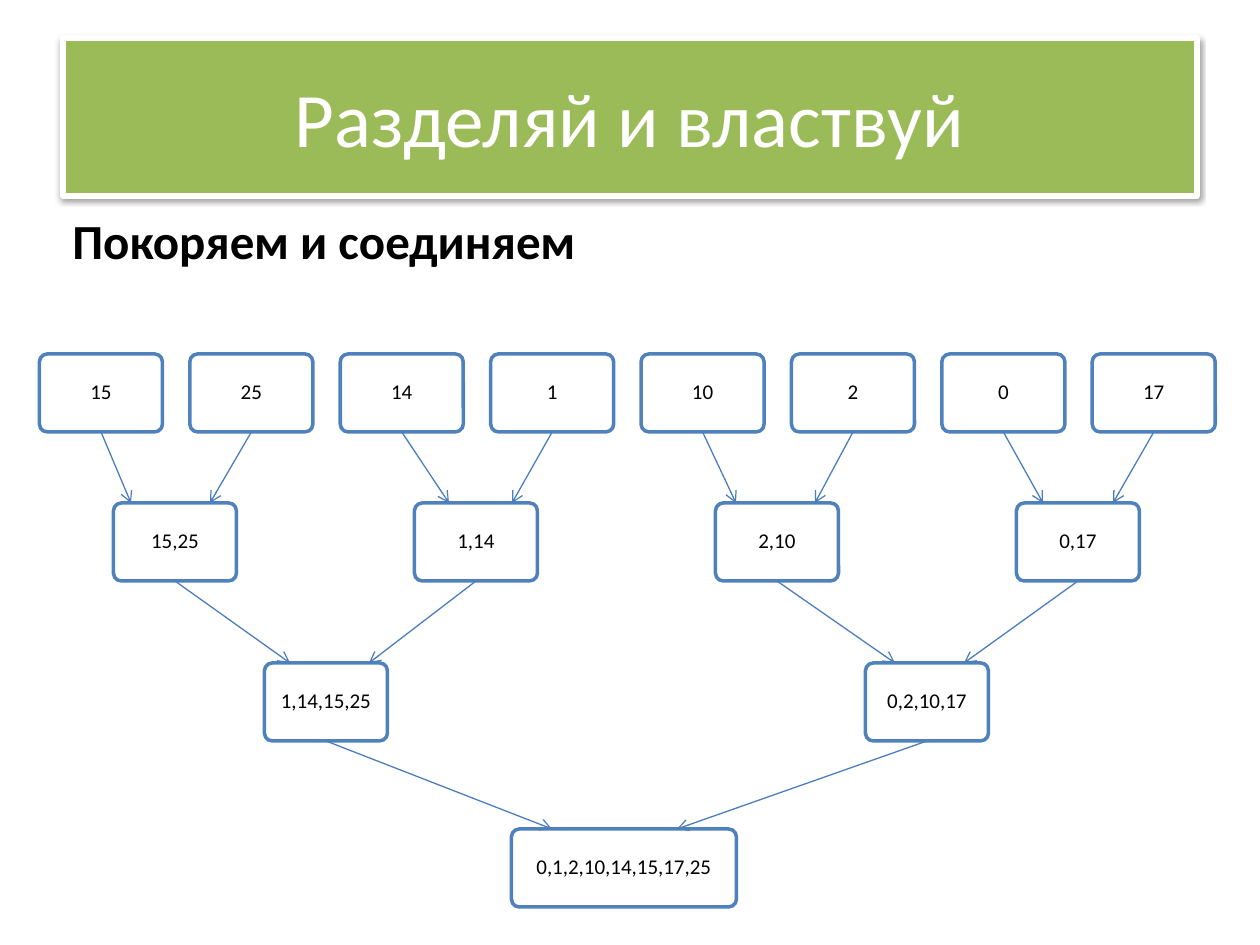
"""Build the slide on the merge steps of divide and conquer."""
from lxml import etree
from pptx import Presentation
from pptx.dml.color import RGBColor
from pptx.enum.shapes import MSO_CONNECTOR as Link, MSO_SHAPE as Form
from pptx.enum.text import MSO_ANCHOR as Anchor, PP_ALIGN as Align
from pptx.oxml import parse_xml
from pptx.oxml.ns import nsdecls, qn
from pptx.util import Pt

PX = 914400 / 126


def rgb(code):
    return RGBColor.from_string(code)


def write(shape, text, size=12, color="000000", bold=False, align=Align.CENTER,
          anchor=Anchor.MIDDLE, gap=None, pad=None):
    frame = shape.text_frame
    frame.word_wrap = True
    frame.vertical_anchor = anchor
    if pad is not None:
        frame.margin_left = frame.margin_right = round(pad * PX)
        frame.margin_top = frame.margin_bottom = round(pad * PX)
    para = frame.paragraphs[0]
    para.alignment = align
    para.line_spacing = gap
    run = para.add_run()
    run.text = text
    run.font.name = "Calibri"
    run.font.size = Pt(size)
    run.font.bold = bold
    run.font.color.rgb = rgb(color)


deck = Presentation()
deck.slide_width, deck.slide_height = round(1260 * PX), round(945 * PX)
slide = deck.slides.add_slide(deck.slide_layouts[5])
shapes = slide.shapes

title = shapes.title
title.left, title.top, title.width, title.height = [
    round(n * PX) for n in (63, 38, 1134, 158)]
title.fill.solid()
title.fill.fore_color.rgb = rgb("9BBB59")
title.line.color.rgb = rgb("FFFFFF")
title.line.width = Pt(3)
write(title, "Разделяй и властвуй", size=44, color="FFFFFF")
title._element.spPr.append(parse_xml(
    f'<a:effectLst {nsdecls("a")}>'
    '<a:outerShdw blurRad="40000" dist="20000" dir="5400000" rotWithShape="0">'
    '<a:srgbClr val="000000"><a:alpha val="38000"/></a:srgbClr>'
    '</a:outerShdw></a:effectLst>'))

rows = [
    (354, 123, 101, 150.4, ["15", "25", "14", "1", "10", "2", "0", "17"], []),
    (503, 123, 175, 301, ["15,25", "1,14", "2,10", "0,17"],
     [131, 210, 449, 512, 736, 815, 1043, 1113]),
    (663, 123, 326, 601, ["1,14,15,25", "0,2,10,17"], [290, 369, 895, 964]),
    (829, 225, 624, 0, ["0,1,2,10,14,15,17,25"], [552, 677]),
]
tall = 78
above = []
for top, wide, first, step, names, ends in rows:
    row = []
    for i, name in enumerate(names):
        left = first + i * step - wide / 2
        box = shapes.add_shape(Form.ROUNDED_RECTANGLE, *[
            round(n * PX) for n in (left, top, wide, tall)])
        box.adjustments[0] = 0.1
        box.shadow.inherit = False
        box.fill.solid()
        box.fill.fore_color.rgb = rgb("FFFFFF")
        tint = box._element.spPr.find(qn("a:solidFill"))[0]
        etree.SubElement(tint, qn("a:alpha"), val="90000")
        box.line.color.rgb = rgb("4F81BD")
        box.line.width = Pt(2)
        write(box, name, gap=0.9, pad=8)
        row.append(box)
    for box, end in zip(above, ends):
        line = shapes.add_connector(
            Link.STRAIGHT, box.left + box.width // 2, box.top + box.height,
            round(end * PX), round(top * PX))
        line.begin_connect(box, 2)
        line.line.color.rgb = rgb("4B7EBC")
        line.line.width = Pt(0.75)
        etree.SubElement(line.line._get_or_add_ln(), qn("a:tailEnd"), type="arrow")
        etree.SubElement(line._element.spPr, qn("a:effectLst"))
    above = row

note = shapes.add_textbox(*[round(n * PX) for n in (60, 204, 556, 72)])
write(note, "Покоряем и соединяем", size=28, bold=True, align=Align.LEFT,
      anchor=Anchor.TOP)

deck.save("out.pptx")
